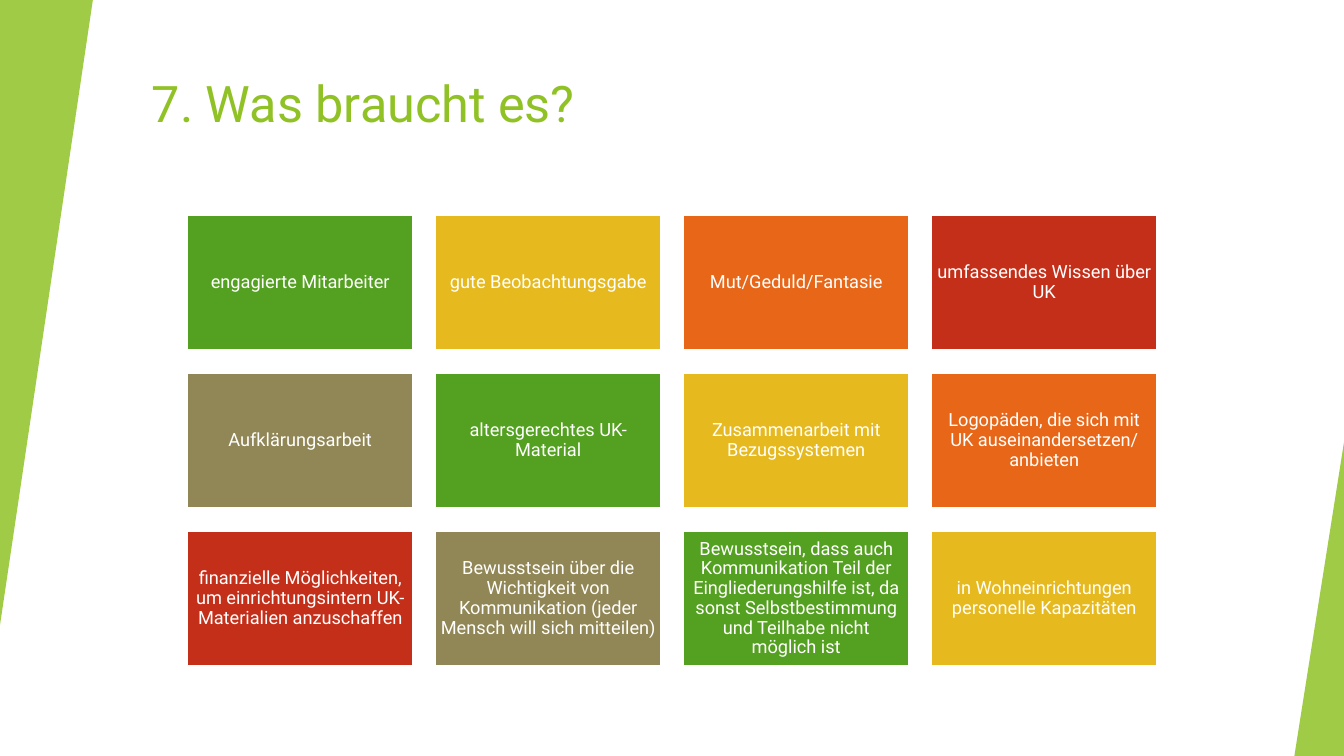
from dataclasses import dataclass

from lxml.etree import SubElement
from pptx import Presentation
from pptx.dml.color import RGBColor
from pptx.enum.shapes import MSO_SHAPE
from pptx.enum.text import MSO_ANCHOR, PP_ALIGN
from pptx.oxml.ns import qn
from pptx.util import Cm, Pt


@dataclass(frozen=True)
class Theme:
    font: str = "Roboto"
    lime: str = "90C226"
    white: str = "FFFFFF"
    tiles: tuple = ("54A021", "E6B91E", "E76618", "C42F1A", "918655")
    head: int = 36
    body: int = 13


THEME = Theme()
COLS = 4
LEFT, TOP = 4.72, 5.42
WIDTH, HEIGHT = 5.69, 3.41
STEP_X, STEP_Y = 6.25, 3.98
NEEDS = (
    "engagierte Mitarbeiter",
    "gute Beobachtungsgabe",
    "Mut/Geduld/Fantasie",
    "umfassendes Wissen über UK",
    "Aufklärungsarbeit",
    "altersgerechtes UK- Material",
    "Zusammenarbeit mit Bezugssystemen",
    "Logopäden, die sich mit UK auseinandersetzen/ anbieten",
    "finanzielle Möglichkeiten, um einrichtungsintern UK-Materialien anzuschaffen",
    "Bewusstsein über die Wichtigkeit von Kommunikation (jeder Mensch will sich mitteilen)",
    "Bewusstsein, dass auch Kommunikation Teil der Eingliederungshilfe ist, "
    "da sonst Selbstbestimmung und Teilhabe nicht möglich ist",
    "in Wohneinrichtungen personelle Kapazitäten",
)


def apply(target, values):
    for name, value in values.items():
        setattr(target, name, value)


def write(shape, text, size, color, frame, para):
    apply(shape.text_frame, {"word_wrap": True, **frame})
    line = shape.text_frame.paragraphs[0]
    line.text = text
    apply(line, para)
    apply(line.font, {"name": THEME.font, "size": Pt(size)})
    line.font.color.rgb = RGBColor.from_string(color)


def add_block(slide, kind, box, color):
    shape = slide.shapes.add_shape(kind, *map(Cm, box))
    shape.shadow.inherit = False
    shape.fill.solid()
    shape.fill.fore_color.rgb = RGBColor.from_string(color)
    return shape


def add_wedge(slide, box, angle):
    wedge = add_block(slide, MSO_SHAPE.ISOSCELES_TRIANGLE, box, THEME.lime)
    wedge.line.fill.background()
    wedge.adjustments[0] = 1
    wedge.rotation = angle
    tint = wedge.fill._xPr.find(".//" + qn("a:srgbClr"))
    SubElement(tint, qn("a:alpha"), val="85000")


def add_title(slide, text):
    box = slide.shapes.add_textbox(Cm(3.58), Cm(1.7), Cm(28.32), Cm(3.05))
    write(box, text, THEME.head, THEME.lime,
          {"vertical_anchor": MSO_ANCHOR.TOP}, {"alignment": PP_ALIGN.LEFT})


def add_tile(slide, index, text):
    row, col = divmod(index, COLS)
    box = (LEFT + col * STEP_X, TOP + row * STEP_Y, WIDTH, HEIGHT)
    color = THEME.tiles[index % len(THEME.tiles)]
    tile = add_block(slide, MSO_SHAPE.RECTANGLE, box, color)
    tile.line.color.rgb = RGBColor.from_string(THEME.white)
    tile.line.width = Pt(1.5)
    sides = ("left", "top", "right", "bottom")
    frame = {f"margin_{side}": Cm(0.13) for side in sides}
    frame["vertical_anchor"] = MSO_ANCHOR.MIDDLE
    write(tile, text, THEME.body, THEME.white, frame,
          {"alignment": PP_ALIGN.CENTER, "line_spacing": 0.9})


def main():
    deck = Presentation()
    apply(deck, {"slide_width": Cm(33.87), "slide_height": Cm(19.05)})
    slide = deck.slides.add_slide(deck.slide_layouts[6])
    add_title(slide, "7. Was braucht es?")
    add_wedge(slide, (0, 0, 2.34, 15.75), 180)
    add_wedge(slide, (32.62, 11.15, 1.25, 7.9), 0)
    for index, text in enumerate(NEEDS):
        add_tile(slide, index, text)
    deck.save("out.pptx")


if __name__ == "__main__":
    main()
